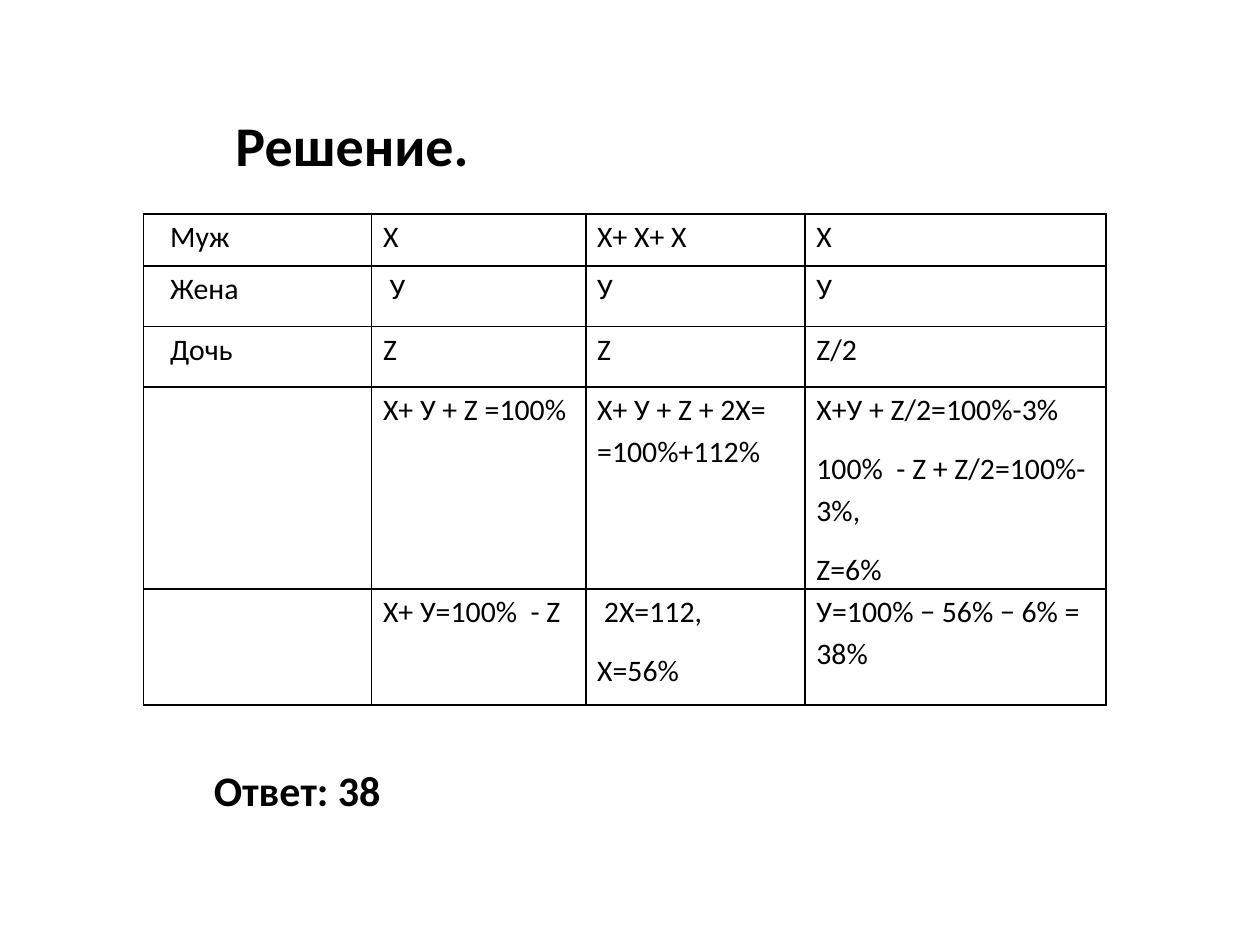
"""Build the solution slide with a table of family income shares."""
from dataclasses import dataclass

import lxml.etree
import pptx
import pptx.dml.color
import pptx.enum.text
import pptx.oxml.ns
import pptx.util

Inches = pptx.util.Inches
Pt = pptx.util.Pt
qn = pptx.oxml.ns.qn


@dataclass(frozen=True)
class Theme:
    font: str = "Calibri"
    ink: str = "000000"
    title_size: int = 32
    answer_size: int = 24
    table_size: int = 17
    border_width: int = 1


THEME = Theme()

TITLE = "Решение. "
ANSWER = "Ответ: 38"
ROWS = [
    ["Муж", "Х", "Х+ Х+ Х", "Х"],
    ["Жена", " У", "У", "У"],
    ["Дочь", "Z", "Z", "Z/2"],
    [
        "",
        "Х+ У + Z =100%",
        "Х+ У + Z + 2Х= =100%+112%",
        "Х+У + Z/2=100%-3%\n100%  - Z + Z/2=100%-3%,\nZ=6%",
    ],
    ["", "Х+ У=100%  - Z", " 2Х=112,\nХ=56%", "У=100% − 56% − 6% = 38%"],
]
COLUMN_WIDTHS = [1.81, 1.7, 1.74, 2.39]
ROW_HEIGHTS = [0.41, 0.48, 0.48, 1.58, 0.92]
TABLE_LEFT, TABLE_TOP = 1.14, 1.7


def style_runs(paragraph, size, bold=False):
    for run in paragraph.runs:
        run.font.name = THEME.font
        run.font.size = Pt(size)
        run.font.bold = bold
        run.font.color.rgb = pptx.dml.color.RGBColor.from_string(THEME.ink)


def add_label(slide, text, box, size):
    shape = slide.shapes.add_textbox(*map(Inches, box))
    frame = shape.text_frame
    frame.text = text
    frame.word_wrap = False
    frame.auto_size = pptx.enum.text.MSO_AUTO_SIZE.SHAPE_TO_FIT_TEXT
    style_runs(frame.paragraphs[0], size, bold=True)
    return frame


def set_indent(paragraph, left, first):
    properties = paragraph._p.get_or_add_pPr()
    properties.set("marL", str(Inches(left)))
    properties.set("indent", str(Inches(first)))


def add_borders(cell):
    properties = cell._tc.get_or_add_tcPr()
    for side in ("a:lnL", "a:lnR", "a:lnT", "a:lnB"):
        line = lxml.etree.SubElement(properties, qn(side), w=str(Pt(THEME.border_width)))
        fill = lxml.etree.SubElement(line, qn("a:solidFill"))
        lxml.etree.SubElement(fill, qn("a:srgbClr"), val=THEME.ink)


def fill_cell(cell, text, indent):
    cell.margin_left = cell.margin_right = Inches(0.09)
    cell.margin_top = cell.margin_bottom = 0
    add_borders(cell)
    cell.fill.background()
    cell.text_frame.text = text
    for paragraph in cell.text_frame.paragraphs:
        paragraph.line_spacing = 1.15
        paragraph.space_after = Pt(10)
        set_indent(paragraph, indent, 0)
        style_runs(paragraph, THEME.table_size)


def add_solution_table(slide):
    frame = slide.shapes.add_table(
        len(ROWS), len(COLUMN_WIDTHS), Inches(TABLE_LEFT), Inches(TABLE_TOP),
        Inches(sum(COLUMN_WIDTHS)), Inches(sum(ROW_HEIGHTS)),
    )
    table = frame.table
    table.first_row = table.horz_banding = False
    for column, width in zip(table.columns, COLUMN_WIDTHS):
        column.width = Inches(width)
    for row, height, texts in zip(table.rows, ROW_HEIGHTS, ROWS):
        row.height = Inches(height)
        for index, (cell, text) in enumerate(zip(row.cells, texts)):
            fill_cell(cell, text, 0.12 if index == 0 else 0)


def main():
    presentation = pptx.Presentation()
    presentation.slide_width = Inches(10)
    presentation.slide_height = Inches(7.5)
    slide = presentation.slides.add_slide(presentation.slide_layouts[6])

    add_solution_table(slide)
    title = add_label(slide, TITLE, (1.51, 0.82, 2.44, 0.64), THEME.title_size)
    title.vertical_anchor = pptx.enum.text.MSO_ANCHOR.MIDDLE
    title.paragraphs[0].alignment = pptx.enum.text.PP_ALIGN.JUSTIFY
    set_indent(title.paragraphs[0], 0, 0.26)
    add_label(slide, ANSWER, (1.6, 6.02, 1.54, 0.5), THEME.answer_size)

    presentation.save("out.pptx")


if __name__ == "__main__":
    main()
